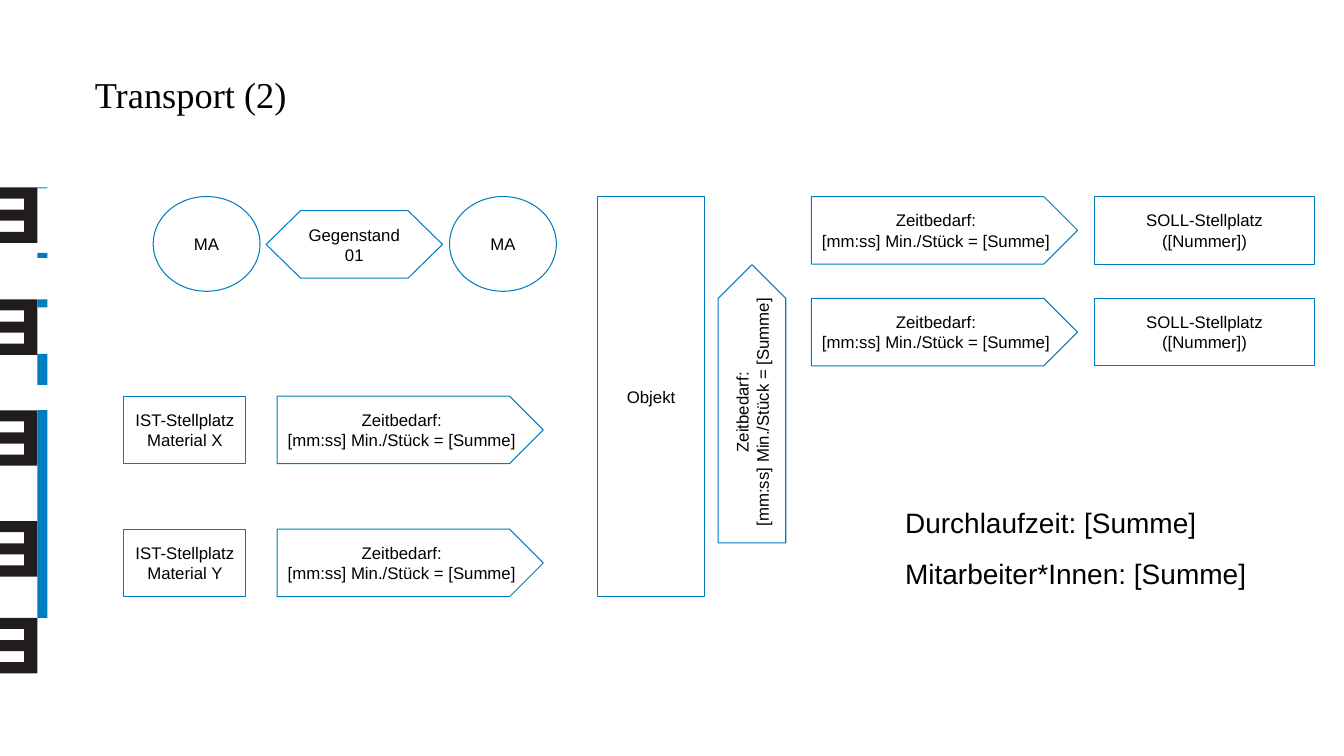
from pptx import Presentation, util as u
from pptx.dml.color import RGBColor
from pptx.enum import shapes, text

PX = u.Inches(1) // 100
KIND = shapes.MSO_SHAPE

THEME = {
    "blue": RGBColor.from_string("007DC0"),
    "dark": RGBColor.from_string("211D1F"),
    "black": RGBColor.from_string("000000"),
    "head": {"name": "Times New Roman", "size": u.Pt(26)},
    "sums": {"name": "Arial", "size": u.Pt(20)},
    "label": {"name": "Arial", "size": u.Pt(12)},
    "line": u.Pt(0.75),
}

TITLE = ["Transport (2)"]
SUMS = ["Durchlaufzeit: [Summe]", "Mitarbeiter*Innen: [Summe]"]
TIME = ["Zeitbedarf:", "[mm:ss] Min./Stück = [Summe]"]
GOAL = ["SOLL-Stellplatz ([Nummer])"]
STOCK = ["Material X", "Material Y"]
STAFF = "MA"
ITEM = "Gegenstand 01"
OBJECT = "Objekt"

# Side band: tops of the combs, then top and height of each blue bar
COMBS = [186, 297, 407, 517, 613]
BARS = [(186, 1), (251, 5), (297, 8), (351, 31), (407, 206)]
COMB_W, TOOTH_X, TOOTH_H, BAR_W = 37, 24, 11, 10

# Flow grid
TOP, ROW_H = 195, 67
GOAL_ROWS = [TOP, TOP + 101]
STOCK_ROWS = [393, 525]
STAFF_X = [152, 446]
PLATE_W = 264

deck = Presentation()
deck.slide_width, deck.slide_height = u.Inches(13.333), u.Inches(7.5)
slide = deck.slides.add_slide(deck.slide_layouts[6])
parts = slide.shapes


def apply(target, values):
    for name, value in values.items():
        setattr(target, name, value)


def scale(*box):
    return [n * PX for n in box]


def write(shape, lines, font, para=None, pad=(10, 5)):
    """Fill a shape with one paragraph per line; pad is (sides, ends) in px."""
    frame = shape.text_frame
    side, end = scale(*pad)
    apply(frame, {
        "word_wrap": True, "vertical_anchor": text.MSO_ANCHOR.MIDDLE,
        "margin_left": side, "margin_right": side,
        "margin_top": end, "margin_bottom": end,
    })
    for i, line in enumerate(lines):
        p = frame.add_paragraph() if i else frame.paragraphs[0]
        p.text = line
        apply(p, para or {})
        apply(p.font, font)
        p.font.color.rgb = THEME["black"]
    return frame


def paint(shape, color):
    shape.shadow.inherit = False
    shape.fill.solid()
    shape.fill.fore_color.rgb = color
    shape.line.fill.background()


def node(kind, box, lines, pad=(10, 5)):
    """Add an outlined, unfilled flow shape with centred text."""
    shape = parts.add_shape(kind, *scale(*box))
    shape.shadow.inherit = False
    shape.fill.background()
    shape.line.color.rgb = THEME["blue"]
    shape.line.width = THEME["line"]
    write(shape, lines, THEME["label"], {"alignment": text.PP_ALIGN.CENTER}, pad)
    return shape


def plate(x, y, width=PLATE_W):
    return node(KIND.PENTAGON, (x, y, width, ROW_H), TIME, pad=(5, 5))


def comb(top):
    """Draw a block with two notches cut in from the left."""
    points = []
    for notch in (1, 3):
        upper, lower = top + notch * TOOTH_H, top + (notch + 1) * TOOTH_H
        points += [(0, upper), (TOOTH_X, upper), (TOOTH_X, lower), (0, lower)]
    base = top + 5 * TOOTH_H
    points += [(0, base), (COMB_W, base), (COMB_W, top)]
    shape = parts.build_freeform(0, top, scale=PX)
    shape.add_line_segments(points, close=True)
    paint(shape.convert_to_shape(), THEME["dark"])


for top in COMBS:
    comb(top)
for top, height in BARS:
    bar = parts.add_shape(KIND.RECTANGLE, *scale(COMB_W, top, BAR_W, height))
    paint(bar, THEME["blue"])

write(parts.add_textbox(*scale(888, 478, 362, 114)), SUMS,
      THEME["sums"], {"line_spacing": 1.5})

for y in GOAL_ROWS:
    node(KIND.RECTANGLE, (1086, y, 218, ROW_H), GOAL)
    plate(805, y)

plate(608, 367, 276).rotation = 270
node(KIND.RECTANGLE, (593, TOP, 106, 397), [OBJECT])

for y, stock in zip(STOCK_ROWS, STOCK):
    plate(275, y)
    node(KIND.RECTANGLE, (123, y, 121, ROW_H), ["IST-Stellplatz", stock])

for x in STAFF_X:
    node(KIND.OVAL, (x, TOP, 106, 94), [STAFF])
item = node(KIND.HEXAGON, (264, 209, 175, ROW_H), [ITEM])
item.adjustments[0] = 0.51

title = write(parts.add_textbox(*scale(94, 72, 1181, 94)), TITLE,
              THEME["head"], pad=(0, 0))
title.vertical_anchor = text.MSO_ANCHOR.TOP

deck.save("out.pptx")
